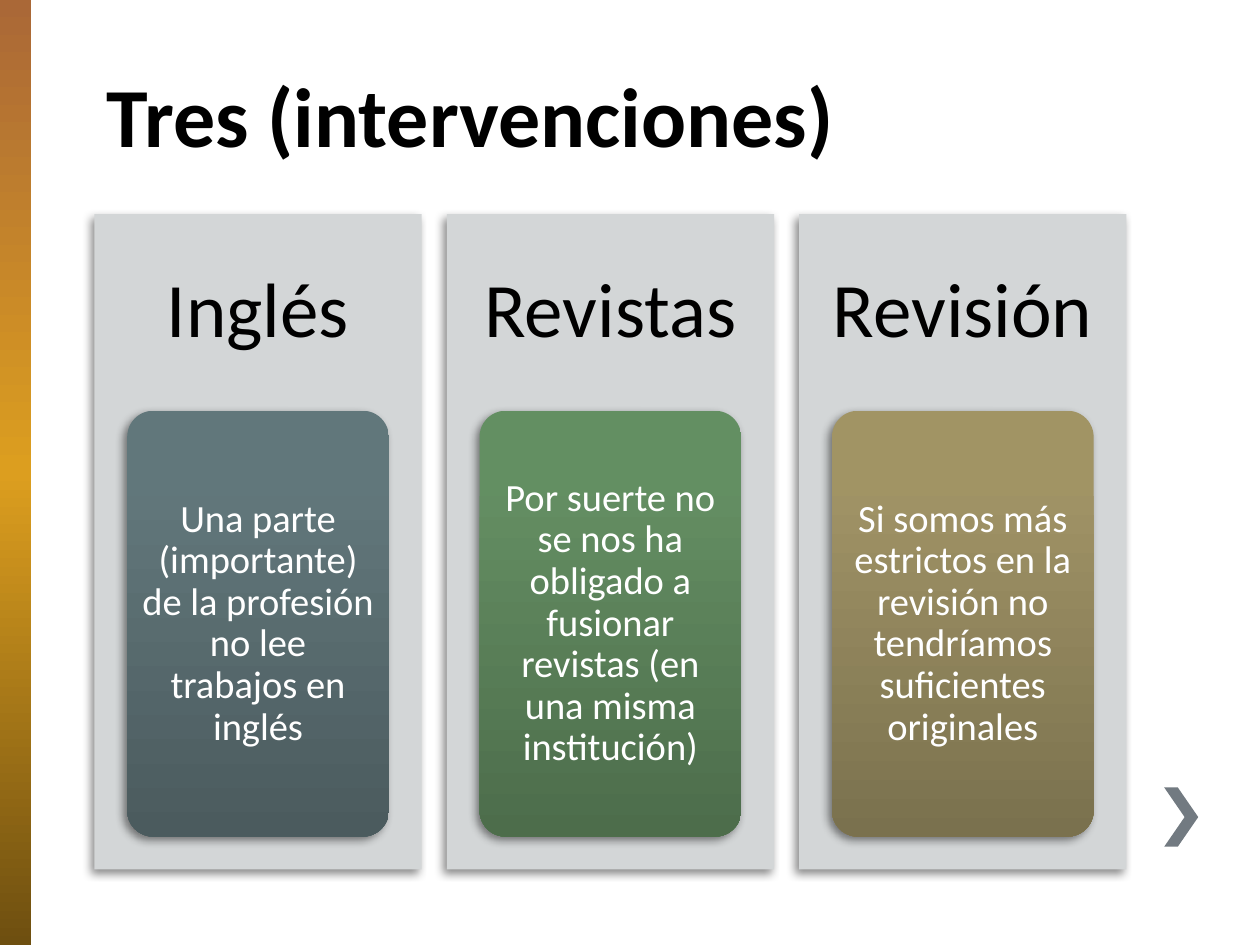
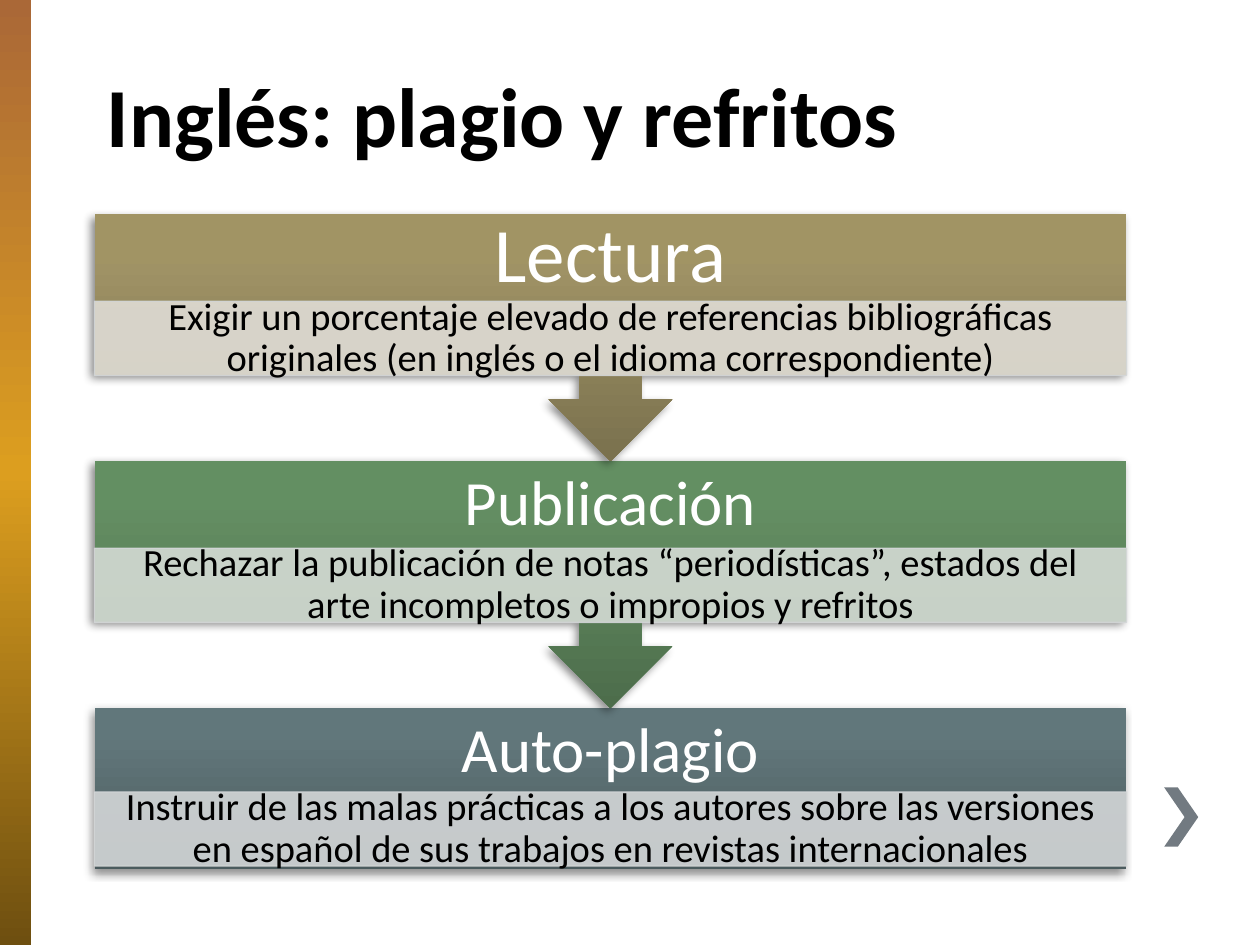
import dataclasses

import lxml.etree
import pptx
import pptx.dml.color
import pptx.enum.shapes
import pptx.enum.text
import pptx.oxml.ns
import pptx.util

SHAPES = pptx.enum.shapes.MSO_SHAPE
ALIGN = pptx.enum.text.PP_ALIGN


@dataclasses.dataclass(frozen=True)
class Theme:
    font: str = "Calibri"
    title_size: int = 48
    heading_size: int = 44
    step_size: int = 36
    body_size: int = 22
    ink: str = "000000"
    light: str = "FFFFFF"
    panel: str = "D3D6D7"
    chevron: str = "727A81"
    sidebar: tuple = ((0, "AA6837"), (50, "DC9E1F"), (100, "6E4F10"))
    slate: tuple = ((0, "61777B"), (20, "61767A"), (100, "4B5B5E"))
    green: tuple = ((0, "638F62"), (20, "638D62"), (100, "4D6D4B"))
    olive: tuple = ((0, "A19464"), (20, "9F9265"), (100, "7A714E"))
    slate_tint: str = "D3D6D7"
    green_tint: str = "D4DBD4"
    olive_tint: str = "DFDCD5"


THEME = Theme()


@dataclasses.dataclass(frozen=True)
class Area:
    left: float
    top: float
    width: float
    height: float

    def share(self, x, y, width, height):
        """Sub-area given as shares of this area."""
        return Area(self.left + x * self.width, self.top + y * self.height,
                    width * self.width, height * self.height)

    def columns(self, count, gap):
        width = (self.width - gap * (count - 1)) / count
        return [Area(self.left + i * (width + gap), self.top, width, self.height)
                for i in range(count)]

    def rows(self, count, gap):
        height = (self.height - gap * (count - 1)) / count
        return [Area(self.left, self.top + i * (height + gap), self.width, height)
                for i in range(count)]

    def emu(self):
        return [pptx.util.Inches(v) for v in dataclasses.astuple(self)]


SLIDE = Area(0, 0, 10, 7.5)
SIDEBAR = Area(0, 0, 0.25, SLIDE.height)
TITLE = Area(0.75, 0.33, 7.92, 1.25)
CONTENT = Area(0.75, 1.7, 8.19, 5.2)
CHEVRON = Area(9.24, 6.25, 0.27, 0.47)
CHEVRON_OUTLINE = ((0.4, 0), (0, 0), (0.6, 0.5), (0, 1), (0.4, 1), (1, 0.5))
COLUMN_GAP = 0.2
ARROW_GAP = 0.68


def rgb(code):
    return pptx.dml.color.RGBColor.from_string(code)


def add_xml(parent, tag, **attributes):
    return lxml.etree.SubElement(
        parent, pptx.oxml.ns.qn(tag), {k: str(v) for k, v in attributes.items()})


def set_attributes(target, values):
    for name, value in values.items():
        setattr(target, name, value)


def paint(shape, fill):
    """Fill with one colour, or with (percent, colour) stops from top to bottom."""
    if isinstance(fill, str):
        shape.fill.solid()
        shape.fill.fore_color.rgb = rgb(fill)
        return
    shape.fill.gradient()
    gradient = shape._element.spPr.find(pptx.oxml.ns.qn("a:gradFill"))
    for child in list(gradient):
        gradient.remove(child)
    stops = add_xml(gradient, "a:gsLst")
    for percent, color in fill:
        stop = add_xml(stops, "a:gs", pos=percent * 1000)
        add_xml(stop, "a:srgbClr", val=color)
    add_xml(gradient, "a:lin", ang=90 * 60000, scaled=0)


def cast_shadow(shape):
    effects = shape._element.spPr.find(pptx.oxml.ns.qn("a:effectLst"))
    shadow = add_xml(effects, "a:outerShdw", blurRad=pptx.util.Pt(5),
                     dist=pptx.util.Pt(3), dir=135 * 60000, algn="tl", rotWithShape=0)
    color = add_xml(shadow, "a:srgbClr", val=THEME.ink)
    add_xml(color, "a:alpha", val=45000)


def make_translucent(shape, percent):
    for color in shape._element.spPr.iter(pptx.oxml.ns.qn("a:srgbClr")):
        add_xml(color, "a:alpha", val=percent * 1000)


def add_block(slide, kind, area, fill, shadow=True):
    block = slide.shapes.add_shape(kind, *area.emu())
    block.shadow.inherit = False
    paint(block, fill)
    block.line.fill.background()
    if shadow:
        cast_shadow(block)
    return block


def write(shape, text, size, color, align=ALIGN.CENTER, bold=False, inset=(0, 0)):
    side, end = (pptx.util.Inches(v) for v in inset)
    frame = shape.text_frame
    set_attributes(frame, {
        "word_wrap": True, "vertical_anchor": pptx.enum.text.MSO_ANCHOR.MIDDLE,
        "margin_left": side, "margin_right": side,
        "margin_top": end, "margin_bottom": end})
    paragraph = frame.paragraphs[0]
    set_attributes(paragraph, {"alignment": align, "line_spacing": 0.9})
    run = paragraph.add_run()
    run.text = text
    set_attributes(run.font, {"name": THEME.font, "size": pptx.util.Pt(size), "bold": bold})
    run.font.color.rgb = rgb(color)


def add_label(slide, area, text, size, color, **layout):
    write(slide.shapes.add_textbox(*area.emu()), text, size, color, **layout)


def add_chevron(slide):
    points = [CHEVRON.share(x, y, 0, 0).emu()[:2] for x, y in CHEVRON_OUTLINE]
    outline = slide.shapes.build_freeform(*points[0])
    outline.add_line_segments(points[1:], close=True)
    chevron = outline.convert_to_shape()
    chevron.shadow.inherit = False
    paint(chevron, THEME.chevron)
    chevron.line.fill.background()


def add_titled_slide(deck, title):
    slide = deck.slides.add_slide(deck.slide_layouts[6])
    add_block(slide, SHAPES.RECTANGLE, SIDEBAR, THEME.sidebar, shadow=False)
    add_chevron(slide)
    add_label(slide, TITLE, title, THEME.title_size, THEME.ink,
              align=ALIGN.LEFT, bold=True, inset=(0.1, 0.05))
    return slide


def add_panel(slide, area, heading, detail, fill):
    add_block(slide, SHAPES.RECTANGLE, area, THEME.panel)
    add_label(slide, area.share(0, 0, 1, 0.3), heading, THEME.heading_size, THEME.ink,
              inset=(0.18, 0.18))
    card = add_block(slide, SHAPES.ROUNDED_RECTANGLE, area.share(0.1, 0.3, 0.8, 0.65), fill)
    card.adjustments[0] = 0.1
    write(card, detail, THEME.body_size, THEME.light, inset=(0.06, 0.05))


def add_step(slide, area, heading, size, detail, fill, tint, is_last):
    """Band with a heading and a tinted strip; all but the last point down."""
    if is_last:
        add_block(slide, SHAPES.RECTANGLE, area, fill)
    else:
        callout = dataclasses.replace(area, height=area.height + ARROW_GAP)
        add_block(slide, SHAPES.DOWN_ARROW_CALLOUT, callout, fill)
    add_label(slide, area.share(0, 0, 1, 0.54), heading, size, THEME.light, inset=(0.14, 0))
    strip_top = 0.52 if is_last else 0.54
    strip = add_block(slide, SHAPES.RECTANGLE, area.share(0, strip_top, 1, 0.46), tint,
                      shadow=False)
    strip.line.color.rgb = rgb(THEME.panel)
    strip.line.width = pptx.util.Pt(0.75)
    make_translucent(strip, 90)
    write(strip, detail, THEME.body_size, THEME.ink, inset=(0.17, 0.03))


def add_interventions(deck):
    slide = add_titled_slide(deck, "Tres (intervenciones)")
    panels = (
        ("Inglés", "Una parte (importante) de la profesión no lee trabajos en inglés",
         THEME.slate),
        ("Revistas", "Por suerte no se nos ha obligado a fusionar revistas "
         "(en una misma institución)", THEME.green),
        ("Revisión", "Si somos más estrictos en la revisión no tendríamos "
         "suficientes originales", THEME.olive))
    for area, panel in zip(CONTENT.columns(len(panels), COLUMN_GAP), panels):
        add_panel(slide, area, *panel)


def add_plagiarism(deck):
    slide = add_titled_slide(deck, "Inglés: plagio y refritos")
    steps = (
        ("Lectura", THEME.heading_size,
         "Exigir un porcentaje elevado de referencias bibliográficas originales "
         "(en inglés o el idioma correspondiente)", THEME.olive, THEME.olive_tint),
        ("Publicación", THEME.step_size,
         "Rechazar la publicación de notas “periodísticas”, estados del arte "
         "incompletos o impropios y refritos", THEME.green, THEME.green_tint),
        ("Auto-plagio", THEME.step_size,
         "Instruir de las malas prácticas a los autores sobre las versiones en español "
         "de sus trabajos en revistas internacionales", THEME.slate, THEME.slate_tint))
    areas = CONTENT.rows(len(steps), ARROW_GAP)
    # Bottom step first, so that each arrow tip lies over the step below it.
    for area, step in reversed(list(zip(areas, steps))):
        add_step(slide, area, *step, is_last=step is steps[-1])


def main():
    deck = pptx.Presentation()
    deck.slide_width = pptx.util.Inches(SLIDE.width)
    deck.slide_height = pptx.util.Inches(SLIDE.height)
    add_interventions(deck)
    add_plagiarism(deck)
    deck.save("out.pptx")


if __name__ == "__main__":
    main()
